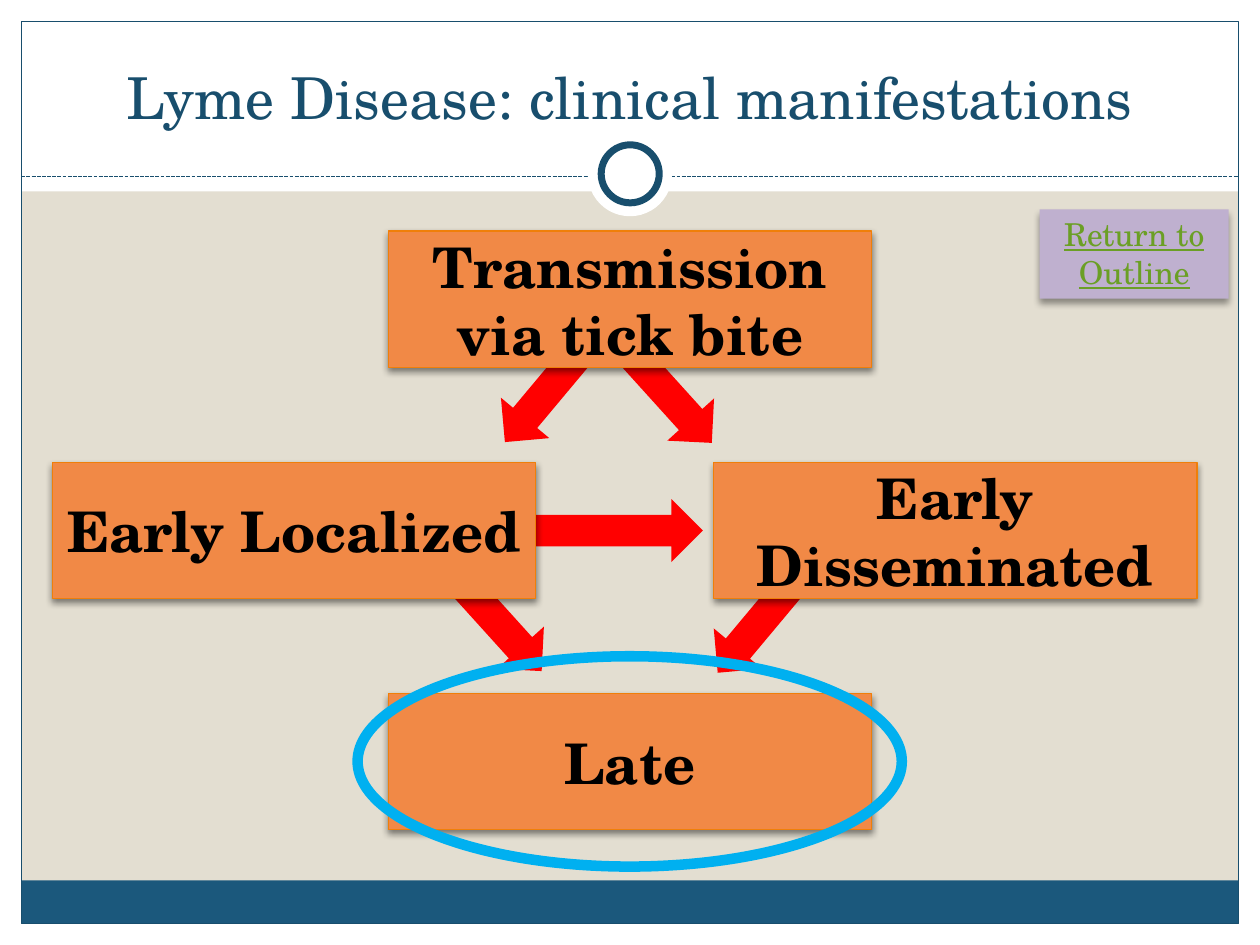
"""Build the Lyme disease clinical manifestations slide."""
from dataclasses import dataclass

from lxml.etree import SubElement
from pptx import Presentation
from pptx.dml.color import RGBColor
from pptx.enum.dml import MSO_LINE
from pptx.enum.shapes import MSO_CONNECTOR, MSO_SHAPE
from pptx.enum.text import MSO_ANCHOR, MSO_AUTO_SIZE, PP_ALIGN
from pptx.oxml.ns import qn
from pptx.util import Cm, Pt


@dataclass(frozen=True)
class Theme:
    """Colours, font and type sizes of the slide."""

    font: str = "TeX Gyre Schola"
    sand: str = "E3DED1"
    white: str = "FFFFFF"
    navy: str = "184E6D"
    footer: str = "1B587C"
    red: str = "FF0000"
    orange: str = "F18946"
    orange_edge: str = "F07F09"
    black: str = "000000"
    sky: str = "00B0F0"
    lilac: str = "BFB0CF"
    green: str = "6B9F25"
    title_size: int = 33
    stage_size: int = 32
    link_size: int = 18


class SlideBuilder:
    """Hold the theme and the current slide and add its elements."""

    def __init__(self, slide, theme):
        """Keep the slide and theme and paint the background."""
        self.slide = slide
        self.theme = theme
        slide.background.fill.solid()
        slide.background.fill.fore_color.rgb = RGBColor.from_string(theme.sand)

    def shape(self, preset, box, fill=None, line=None, weight=0.75, rotation=0):
        """Add a preset shape placed by left, top, width and height in cm."""
        figure = self.slide.shapes.add_shape(preset, *map(Cm, box))
        figure.shadow.inherit = False
        figure.rotation = rotation
        if fill:
            figure.fill.solid()
            figure.fill.fore_color.rgb = RGBColor.from_string(fill)
        else:
            figure.fill.background()
        if line:
            figure.line.color.rgb = RGBColor.from_string(line)
            figure.line.width = Pt(weight)
        else:
            figure.line.fill.background()
        return figure

    def label(self, holder, words, size, color, frame_format, **font_format):
        """Set one centred paragraph in a shape."""
        frame = holder.text_frame
        frame.text = words
        paragraph = frame.paragraphs[0]
        paragraph.alignment = PP_ALIGN.CENTER
        for name, value in {"word_wrap": True, **frame_format}.items():
            setattr(frame, name, value)
        font = paragraph.runs[0].font
        base = {"name": self.theme.font, "size": Pt(size)}
        for name, value in {**base, **font_format}.items():
            setattr(font, name, value)
        font.color.rgb = RGBColor.from_string(color)

    def cast_shadow(self, figure, opacity, blur, distance):
        """Give a shape a soft shadow straight below it."""
        effects = figure._element.spPr.find(qn("a:effectLst"))
        shadow = SubElement(effects, qn("a:outerShdw"), blurRad=str(Pt(blur)),
                            dist=str(Pt(distance)), dir="5400000", rotWithShape="0")
        tint = SubElement(shadow, qn("a:srgbClr"), val=self.theme.black)
        SubElement(tint, qn("a:alpha"), val=str(opacity * 1000))

    def title(self, words, box):
        """Place the title placeholder above the backdrop."""
        heading = self.slide.shapes.title
        self.slide.shapes._spTree.append(heading._element)
        for name, value in zip(("left", "top", "width", "height"), box):
            setattr(heading, name, Cm(value))
        self.label(heading, words, self.theme.title_size, self.theme.navy,
                   {"vertical_anchor": MSO_ANCHOR.BOTTOM})

    def divider(self, left, right, height):
        """Draw the dashed rule under the title."""
        rule = self.slide.shapes.add_connector(
            MSO_CONNECTOR.STRAIGHT, Cm(left), Cm(height), Cm(right), Cm(height))
        rule.line.color.rgb = RGBColor.from_string(self.theme.navy)
        for name, value in {"width": Pt(0.75), "dash_style": MSO_LINE.SQUARE_DOT}.items():
            setattr(rule.line, name, value)
        SubElement(rule._element.spPr, qn("a:effectLst"))

    def arrow(self, left, top, length, rotation):
        """Add a red block arrow turned from pointing down."""
        self.shape(MSO_SHAPE.DOWN_ARROW, (left, top, 1.27, length),
                   self.theme.red, rotation=rotation)

    def stage(self, words, left, top):
        """Add one disease stage."""
        stage = self.shape(MSO_SHAPE.RECTANGLE, (left, top, 9.74, 2.75),
                           self.theme.orange, self.theme.orange_edge)
        self.cast_shadow(stage, 45, 4, 2)
        self.label(stage, words, self.theme.stage_size, self.theme.black,
                   {"vertical_anchor": MSO_ANCHOR.MIDDLE}, bold=True)

    def outline_button(self, words, box):
        """Add the button that leads back to the outline."""
        button = self.shape(MSO_SHAPE.RECTANGLE, box, self.theme.lilac)
        self.cast_shadow(button, 40, 4, 3)
        self.label(button, words, self.theme.link_size, self.theme.green,
                   {"vertical_anchor": MSO_ANCHOR.TOP,
                    "auto_size": MSO_AUTO_SIZE.SHAPE_TO_FIT_TEXT}, underline=True)


def main():
    """Build and save the slide."""
    width, height, margin = 25.4, 19.05, 0.43
    deck = Presentation()
    deck.slide_width, deck.slide_height = Cm(width), Cm(height)
    theme = Theme()
    builder = SlideBuilder(deck.slides.add_slide(deck.slide_layouts[5]), theme)

    for band in ((0, height - margin, width, margin), (0, 0, width, 3.86),
                 (0, 0, margin, height), (width - margin, 0, margin, height)):
        builder.shape(MSO_SHAPE.RECTANGLE, band, theme.white)
    inner_width = width - 2 * margin
    builder.shape(MSO_SHAPE.RECTANGLE, (margin, 17.75, inner_width, 0.87), theme.footer)
    builder.shape(MSO_SHAPE.RECTANGLE,
                  (margin, margin, inner_width, height - 2 * margin), line=theme.navy)
    builder.divider(margin, width - margin, 3.56)
    builder.shape(MSO_SHAPE.OVAL, (11.85, 2.66, 1.7, 1.7), theme.white)
    builder.shape(MSO_SHAPE.OVAL, (12.12, 2.92, 1.17, 1.17), theme.white, theme.navy, 4)

    builder.arrow(11.63, 8.79, 3.81, 270)
    for left, top, rotation in ((14.68, 11.23, 39.9), (9.4, 11.23, 317.9),
                                (12.83, 6.63, 317.9), (10.39, 6.58, 39.9)):
        builder.arrow(left, top, 2.64, rotation)

    builder.title("Lyme Disease: clinical manifestations", (0.85, 0.64, 23.7, 2.12))
    first_row, row_step = 4.66, 4.66
    for words, left, row in (("Transmission via tick bite", 7.83, 0),
                             ("Early Localized", 1.06, 1),
                             ("Early Disseminated", 14.39, 1),
                             ("Late", 7.83, 2)):
        builder.stage(words, left, first_row + row * row_step)
    builder.shape(MSO_SHAPE.OVAL, (7.21, 13.23, 10.97, 4.24), line=theme.sky, weight=6)
    builder.outline_button("Return to Outline", (20.96, 4.22, 3.81, 1.8))
    deck.save("out.pptx")


if __name__ == "__main__":
    main()
